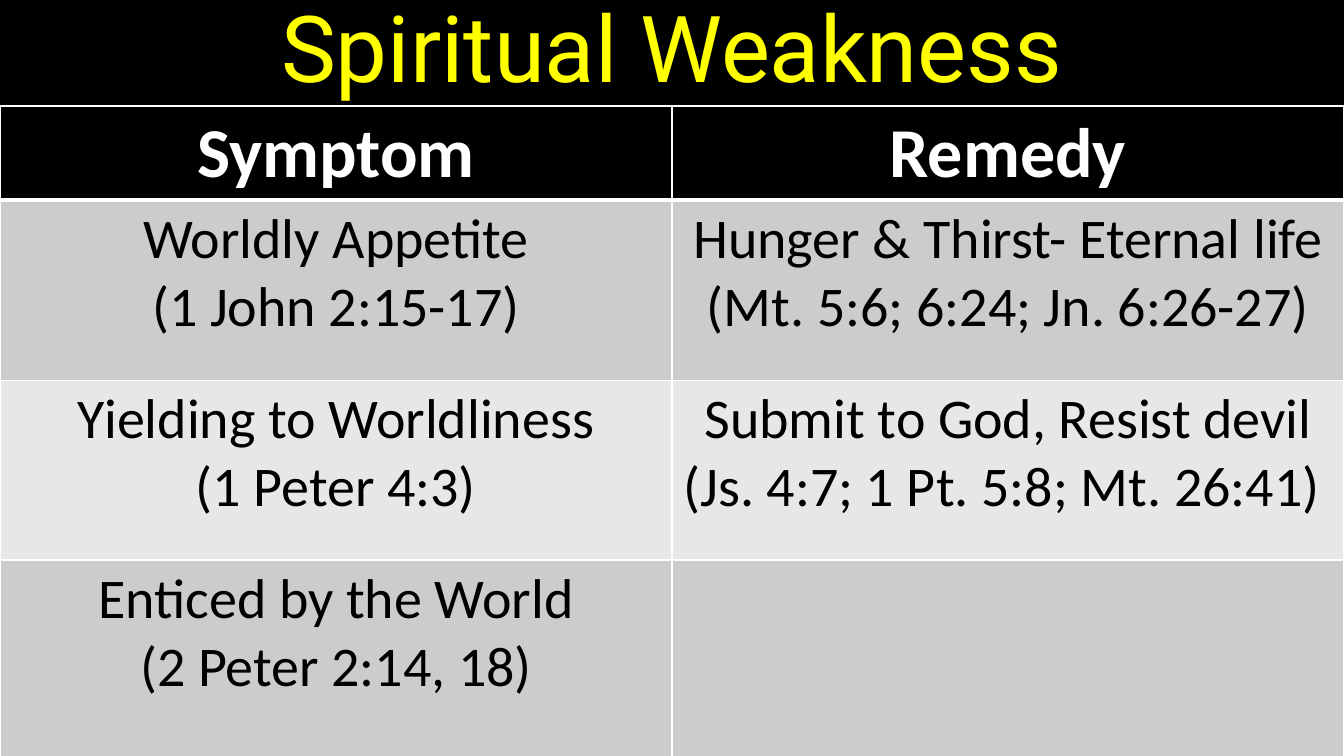
from dataclasses import dataclass
from lxml.etree import SubElement
from pptx import Presentation
from pptx.dml.color import RGBColor as RGB
from pptx.enum.text import MSO_ANCHOR as Anchor, PP_ALIGN as Align
from pptx.oxml.ns import qn
from pptx.util import Emu, Pt

# Content
TITLE = "Spiritual Weakness"
HEADS = ["Symptom", "Remedy"]
ROWS = [
    (["Worldly Appetite", "(1 John 2:15-17)"],
     ["Hunger & Thirst- Eternal life", "(Mt. 5:6; 6:24; Jn. 6:26-27)"]),
    (["Yielding to Worldliness", "(1 Peter 4:3)"],
     ["Submit to God, Resist devil", "(Js. 4:7; 1 Pt. 5:8; Mt. 26:41) "]),
    (["Enticed by the World", "(2 Peter 2:14, 18)"], []),
]

# Layout in px
WIDE, HIGH = 1344, 756
TOP = 106
TALL = [91, 180, 180, 215]


@dataclass
class Theme:
    black: str = "000000"
    white: str = "FFFFFF"
    yellow: str = "FFFF00"
    bands: tuple = ("CCCCCC", "E7E7E7")
    face: str = "Roboto"
    body: str = "Calibri"
    title: int = 66
    head: int = 50
    text: int = 40
    thin: int = 1
    thick: int = 3


theme = Theme()


def px(n):
    return Emu(round(n * 914400 / 100.8))


def write(frame, lines, face, size, color, bold=False):
    frame.text = "\n".join(lines)
    for para in frame.paragraphs:
        para.alignment = Align.CENTER
        font = para.font
        font.name, font.size, font.bold = face, Pt(size), bold
        font.color.rgb = RGB.from_string(color)


def border(cell, top, bottom):
    props = cell._tc.get_or_add_tcPr()
    sides = {"L": theme.thin, "R": theme.thin, "T": top, "B": bottom}
    for side, width in sides.items():
        line = SubElement(props, qn("a:ln" + side), w=str(Pt(width)))
        fill = SubElement(line, qn("a:solidFill"))
        SubElement(fill, qn("a:srgbClr"), val=theme.white)


# Slide
deck = Presentation()
deck.slide_width, deck.slide_height = px(WIDE), px(HIGH)
slide = deck.slides.add_slide(deck.slide_layouts[6])
back = slide.background.fill
back.solid()
back.fore_color.rgb = RGB.from_string(theme.black)

# Title
frame = slide.shapes.add_textbox(0, 0, px(WIDE), px(TOP)).text_frame
frame.word_wrap = True
frame.vertical_anchor = Anchor.MIDDLE
write(frame, [TITLE], theme.face, theme.title, theme.yellow)
frame.paragraphs[0].line_spacing = 0.9

# Table
grid = [[[head] for head in HEADS], *ROWS]
table = slide.shapes.add_table(len(grid), len(HEADS), 0, px(TOP),
                               px(WIDE), px(sum(TALL))).table
for r, row in enumerate(grid):
    table.rows[r].height = px(TALL[r])
    for c, lines in enumerate(row):
        cell = table.cell(r, c)
        border(cell, theme.thick if r == 1 else theme.thin,
               theme.thick if r == 0 else theme.thin)
        cell.fill.solid()
        shade = theme.bands[(r - 1) % 2] if r else theme.black
        cell.fill.fore_color.rgb = RGB.from_string(shade)
        size, color = (theme.text, theme.black) if r else (theme.head, theme.white)
        write(cell.text_frame, lines, theme.body, size, color, r == 0)

deck.save("out.pptx")
